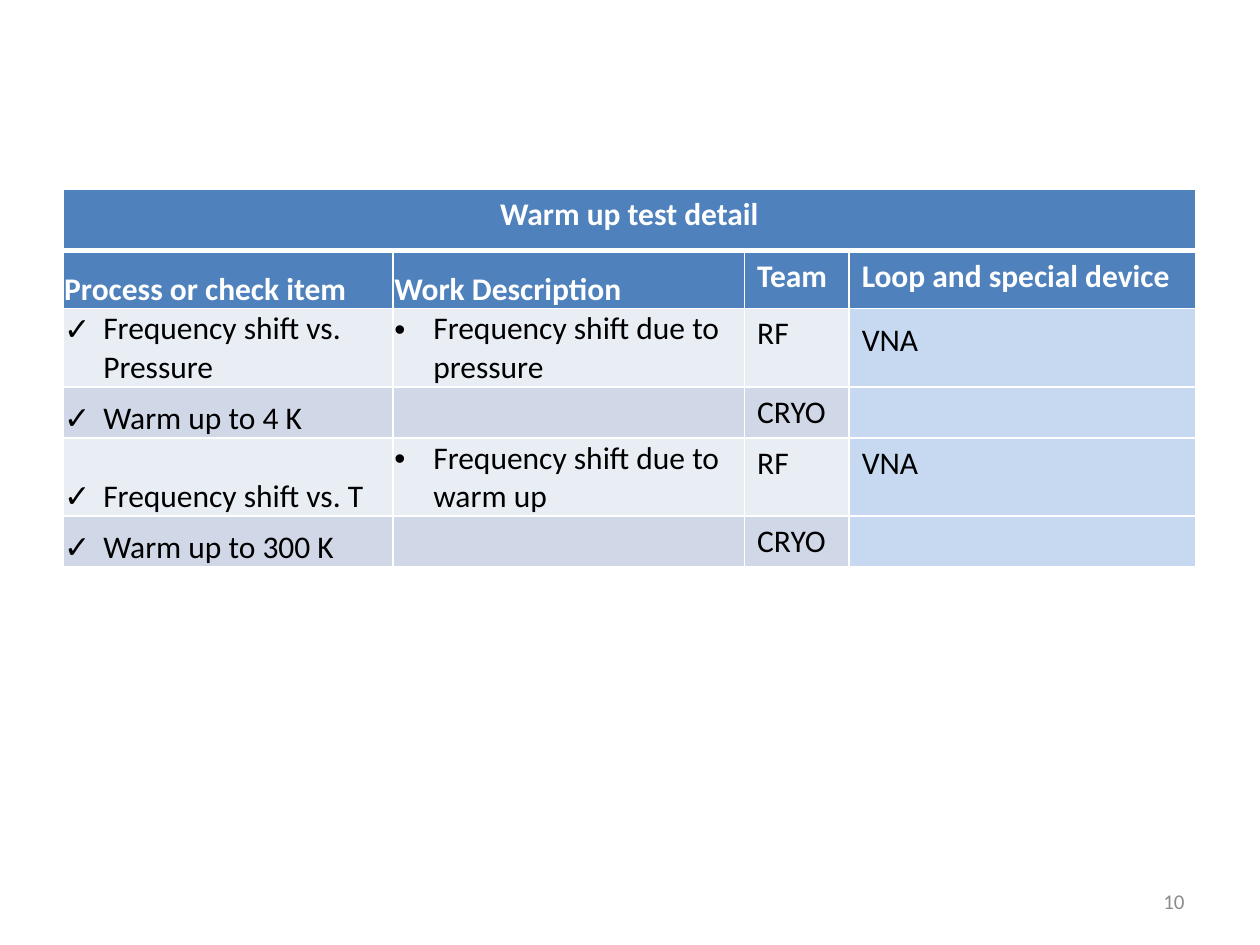
from lxml.etree import SubElement
from pptx import Presentation
from pptx.dml.color import RGBColor
from pptx.enum.text import MSO_ANCHOR as Anchor, PP_ALIGN as Align
from pptx.oxml.ns import qn
from pptx.util import Inches, Pt

FONT = "Calibri"
WHITE = RGBColor(0xFF, 0xFF, 0xFF)
BLACK = RGBColor(0, 0, 0)
GREY = RGBColor(0x8C, 0x8C, 0x8C)
HEAD = RGBColor(0x4F, 0x81, 0xBD)
BANDS = [RGBColor(0xE9, 0xED, 0xF4), RGBColor(0xD0, 0xD8, 0xE8)]
DEVICE = RGBColor(0xC6, 0xD9, 0xF1)

ROWS = [
    ("Warm up test detail", "", "", ""),
    ("Process or check item", "Work Description", "Team", "Loop and special device"),
    ("Frequency shift vs. Pressure", "Frequency shift due to pressure", "RF", "VNA　"),
    ("Warm up to 4 K", "", "CRYO", ""),
    ("Frequency shift vs. T", "Frequency shift due to warm up", "RF", "VNA"),
    ("Warm up to 300 K", "", "CRYO", ""),
]
COL_WIDTHS = [2.62, 2.79, 0.83, 2.75]
ROW_HEIGHTS = [0.49, 0.46, 0.62, 0.4, 0.62, 0.4]
BULLETS = ["✓", "•"]
PAGE = "10"


def add_run(p, text, size, color, bold=False):
    """Add one formatted run to a paragraph."""
    r = p.add_run()
    r.text = text
    r.font.name, r.font.size, r.font.bold = FONT, Pt(size), bold
    r.font.color.rgb = color


def add_bullet(p, char):
    """Give a paragraph a hanging bullet."""
    pPr = p._p.get_or_add_pPr()
    pPr.set("marL", str(Inches(0.31)))
    pPr.set("indent", str(-Inches(0.31)))
    SubElement(pPr, qn("a:buFont")).set("typeface", "Arial")
    SubElement(pPr, qn("a:buChar")).set("char", char)


def set_borders(cell, row):
    """Draw white cell borders, thick below the title row."""
    widths = {"L": 1, "R": 1, "T": 3 if row == 1 else 1, "B": 3 if row == 0 else 1}
    tcPr = cell._tc.get_or_add_tcPr()
    for side, width in widths.items():
        ln = SubElement(tcPr, qn(f"a:ln{side}"), w=str(Pt(width)))
        fill = SubElement(ln, qn("a:solidFill"))
        SubElement(fill, qn("a:srgbClr")).set("val", str(WHITE))


def fill_cell(cell, row, col, text):
    """Style one table cell and write its text."""
    header = row < 2
    set_borders(cell, row)
    cell.fill.solid()
    cell.fill.fore_color.rgb = HEAD if header else DEVICE if col == 3 else BANDS[row % 2]
    if not text:
        return
    p = cell.text_frame.paragraphs[0]
    if row == 0:
        p.alignment = Align.CENTER
    elif col < 2:
        cell.vertical_anchor = Anchor.BOTTOM
        cell.margin_left = cell.margin_right = cell.margin_top = Inches(0.01)
        cell.margin_bottom = 0
        if not header:
            add_bullet(p, BULLETS[col])
    add_run(p, text, 18, WHITE if header else BLACK, header)


def main():
    """Build the warm up test slide."""
    prs = Presentation()
    prs.slide_width, prs.slide_height = Inches(10), Inches(7.5)
    s = prs.slides.add_slide(prs.slide_layouts[6])

    table = s.shapes.add_table(
        len(ROWS), len(COL_WIDTHS), Inches(0.5), Inches(1.5),
        Inches(sum(COL_WIDTHS)), Inches(sum(ROW_HEIGHTS))).table
    for column, width in zip(table.columns, COL_WIDTHS):
        column.width = Inches(width)
    for row, height in zip(table.rows, ROW_HEIGHTS):
        row.height = Inches(height)
    for i, texts in enumerate(ROWS):
        for j, text in enumerate(texts):
            fill_cell(table.cell(i, j), i, j, text)
    table.cell(0, 0).merge(table.cell(0, len(COL_WIDTHS) - 1))

    tf = s.shapes.add_textbox(Inches(7.17), Inches(6.95), Inches(2.33), Inches(0.4)).text_frame
    tf.word_wrap = True
    tf.vertical_anchor = Anchor.MIDDLE
    p = tf.paragraphs[0]
    p.alignment = Align.RIGHT
    add_run(p, PAGE, 12, GREY)

    prs.save("out.pptx")


if __name__ == "__main__":
    main()
